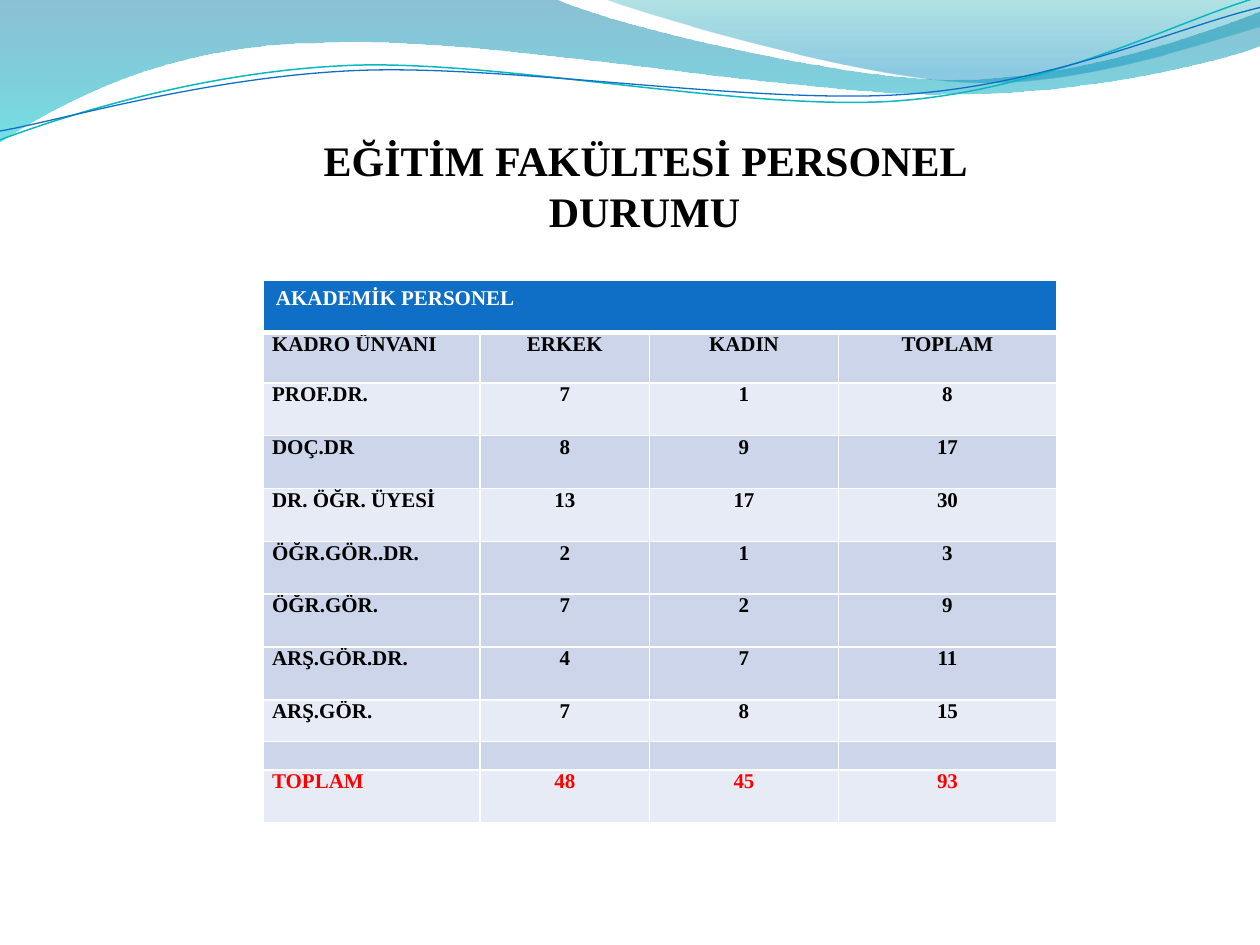
from math import cos, radians, sin

from lxml.etree import SubElement
from pptx import Presentation
from pptx.dml.color import RGBColor
from pptx.enum.text import MSO_ANCHOR, PP_ALIGN
from pptx.oxml import parse_xml
from pptx.oxml.ns import nsdecls, qn
from pptx.util import Pt

FONT = "Times New Roman"
COLORS = {
    "black": "000000", "white": "FFFFFF", "red": "FF0000",
    "header": "0F6FC6", "dark_band": "CCD5EA", "light_band": "E7EBF5",
    "wave_top": "0074A1", "wave_bottom": "00C6CF",
    "crest_top": "00A1A9", "crest_bottom": "008BBF",
    "teal_line": "0AB8BF", "blue_line": "0F6FC6",
}


def color(name):
    return RGBColor.from_string(COLORS[name])


def add_wave(segments, closed, tilt=0, center=(0, 0)):
    """Draw lines (2 numbers) and Bezier curves (6 numbers), given in points."""
    # Undo the tilt in the outline, since the shape itself is rotated
    cx, cy = center
    ca, sa = cos(radians(-tilt)), sin(radians(-tilt))
    points = [(Pt(cx + (x - cx) * ca - (y - cy) * sa),
               Pt(cy + (x - cx) * sa + (y - cy) * ca))
              for segment in segments
              for x, y in zip(segment[::2], segment[1::2])]
    builder = slide.shapes.build_freeform(*points[0])
    builder.add_line_segments(points[1:], close=closed)
    wave = builder.convert_to_shape()
    wave.rotation = tilt
    wave.shadow.inherit = False
    # Join each three points of a curve into one Bezier segment
    steps = wave._element.iter(qn("a:lnTo"))
    steps = iter(list(steps))
    for segment in segments[1:]:
        first = next(steps)
        if len(segment) == 6:
            curve = parse_xml(f"<a:cubicBezTo {nsdecls('a')}/>")
            first.addprevious(curve)
            for step in (first, next(steps), next(steps)):
                curve.append(step[0])
                step.getparent().remove(step)
    return wave


prs = Presentation()
prs.slide_width, prs.slide_height = Pt(720), Pt(540)
slide = prs.slides.add_slide(prs.slide_layouts[5])

# Filled waves: outline, then (color, position, opacity in percent) stops
filled_waves = [
    ([(0, -0.7), (317, -0.7),
      (342.7, 12.2, 478.1, 45.4, 545.8, 45.4), (614.2, 45.4, 689.8, 18.7, 720, 6.5),
      (720.7, 25.9),
      (707.8, 31.7, 626.4, 54.7, 537.1, 54), (447.8, 54, 275, 20.2, 185, 24.5),
      (92.9, 25.2, 33.1, 59.8, -0.7, 81.4)],
     [("wave_top", 0, 45), ("wave_bottom", 1, 55)]),
    ([(344.9, -0.7),
      (366.5, 7.9, 491, 44.6, 553.7, 46.8), (616.3, 49.7, 691.9, 23, 720, 15.1),
      (720, 0)],
     [("crest_top", 0, 30), ("crest_bottom", 0.8, 45)]),
]
for outline, stops in filled_waves:
    wave = add_wave(outline, closed=True)
    wave.line.fill.background()
    wave.fill.gradient()
    wave.fill.gradient_angle = 270
    for stop, (name, position, opacity) in zip(wave.fill.gradient_stops, stops):
        stop.color.rgb = color(name)
        stop.position = position
    for rgb, (_, _, opacity) in zip(wave._element.iter(qn("a:srgbClr")), stops):
        SubElement(rgb, qn("a:alpha"), val=str(opacity * 1000))

# Thin wave lines
wave_lines = [
    ([(0, 79.9), (34.6, 67, 113.8, 41, 199.4, 37.4),
      (284.4, 33.8, 427, 64.1, 513.4, 57.6), (599.8, 51.1, 675.4, 10.8, 718.6, -1.4)],
     (359.3, 41.4), "teal_line", 0.85),
    ([(0, 74.9), (33.8, 69.1, 118.1, 43.9, 203.8, 40.3),
      (290.2, 36.7, 429.8, 59.8, 516.2, 54), (601.9, 48.2, 673.9, 15.1, 720, 4.3)],
     (359.6, 42.5), "blue_line", 0.75),
]
for outline, center, name, width in wave_lines:
    wave = add_wave(outline, closed=False, tilt=357.3, center=center)
    wave.fill.background()
    wave.line.color.rgb = color(name)
    wave.line.width = Pt(width)

# Title
title = slide.shapes.title
title.left, title.top, title.width, title.height = Pt(140.4), Pt(73.4), Pt(455.8), Pt(87.1)
title.text_frame.text = "EĞİTİM FAKÜLTESİ PERSONEL DURUMU"
title.text_frame.vertical_anchor = MSO_ANCHOR.TOP
heading = title.text_frame.paragraphs[0]
heading.alignment = PP_ALIGN.CENTER
heading.font.name, heading.font.size, heading.font.bold = FONT, Pt(24), True
heading.font.color.rgb = color("black")

# Staff table: row height, fill, cell texts
staff = [
    (29.7, "header", ["AKADEMİK PERSONEL", "", "", ""]),
    (28.8, "dark_band", ["KADRO ÜNVANI", "ERKEK", "KADIN", "TOPLAM"]),
    (30.2, "light_band", ["PROF.DR.", "7", "1", "8"]),
    (30.2, "dark_band", ["DOÇ.DR", "8", "9", "17"]),
    (30.2, "light_band", ["DR. ÖĞR. ÜYESİ", "13", "17", "30"]),
    (30.2, "dark_band", ["ÖĞR.GÖR..DR.", "2", "1", "3"]),
    (30.2, "dark_band", ["ÖĞR.GÖR.", "7", "2", "9"]),
    (30.2, "dark_band", ["ARŞ.GÖR.DR.", "4", "7", "11"]),
    (23.7, "light_band", ["ARŞ.GÖR.", "7", "8", "15"]),
    (16.3, "dark_band", ["", "", "", ""]),
    (30.2, "light_band", ["TOPLAM", "48", "45", "93"]),
]
column_widths = [123.8, 97, 107.8, 124.8]
table = slide.shapes.add_table(len(staff), len(column_widths), Pt(150.5), Pt(160.3),
                               Pt(sum(column_widths)),
                               Pt(sum(row[0] for row in staff))).table
for column, width in zip(table.columns, column_widths):
    column.width = Pt(width)
for r, (height, band, texts) in enumerate(staff):
    table.rows[r].height = Pt(height)
    text_color = {0: "white", len(staff) - 1: "red"}.get(r, "black")
    for c, text in enumerate(texts):
        cell = table.cell(r, c)
        cell.fill.solid()
        cell.fill.fore_color.rgb = color(band)
        if r > 0:
            cell.margin_left = cell.margin_right = Pt(5)
            cell.margin_top = cell.margin_bottom = 0
        # White grid, with a thick rule under the header
        widths = {"lnL": 1, "lnR": 1, "lnT": 3 if r == 1 else 1, "lnB": 3 if r == 0 else 1}
        for position, (side, width) in enumerate(widths.items()):
            border = parse_xml(
                f'<a:{side} {nsdecls("a")} w="{Pt(width)}"><a:solidFill>'
                f'<a:srgbClr val="{COLORS["white"]}"/></a:solidFill></a:{side}>')
            cell._tc.get_or_add_tcPr().insert(position, border)
        entry = cell.text_frame.paragraphs[0]
        if not text:
            SubElement(entry._p, qn("a:endParaRPr"), sz="1200")
            continue
        cell.text = text
        entry = cell.text_frame.paragraphs[0]
        entry.alignment = PP_ALIGN.CENTER if c else PP_ALIGN.LEFT
        entry.font.name, entry.font.size, entry.font.bold = FONT, Pt(12), True
        entry.font.color.rgb = color(text_color)
table.cell(0, 0).merge(table.cell(0, len(column_widths) - 1))

prs.save("out.pptx")
